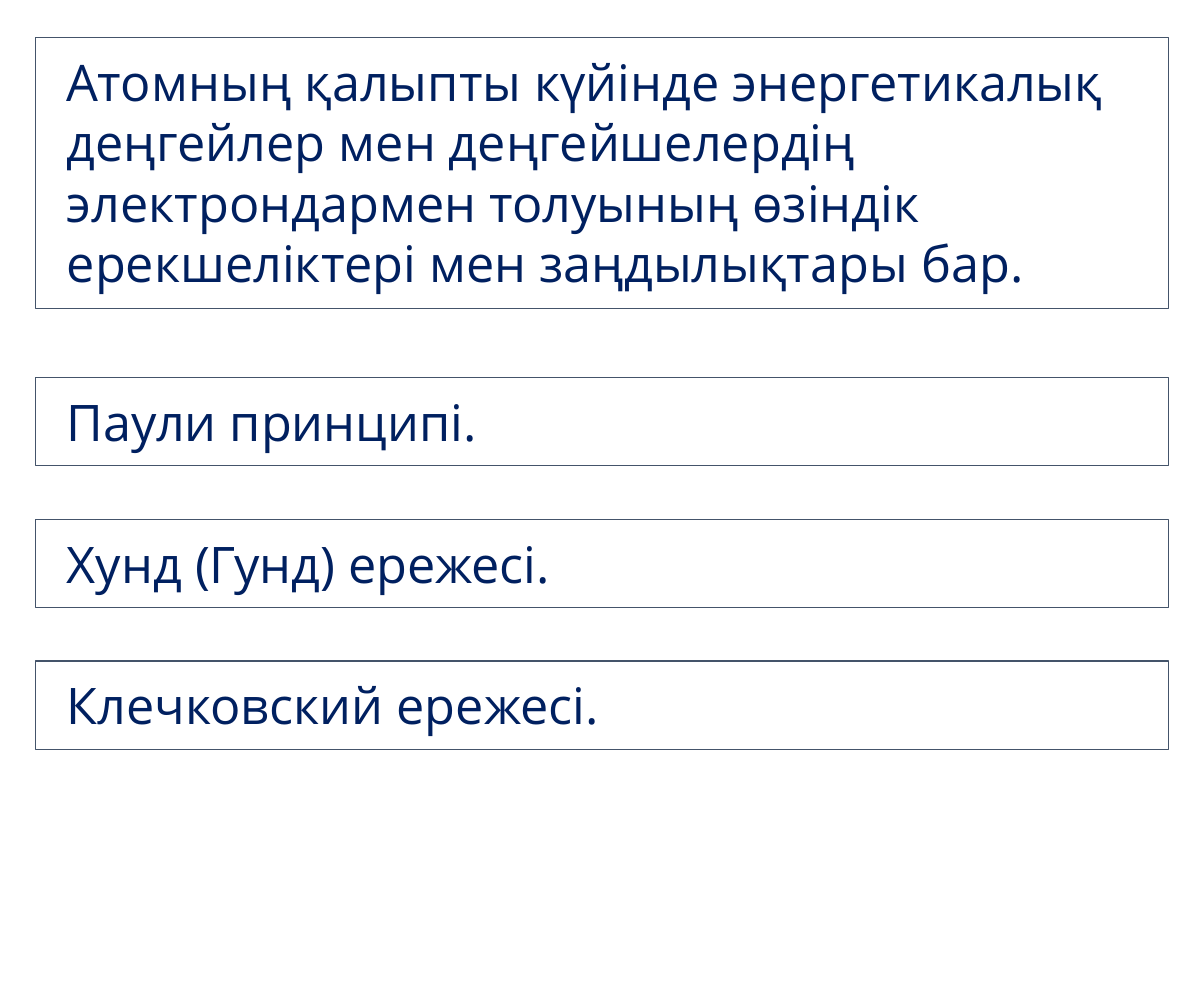
from dataclasses import dataclass

from pptx import Presentation
from pptx.dml.color import RGBColor
from pptx.enum.shapes import MSO_SHAPE
from pptx.enum.text import MSO_ANCHOR, MSO_AUTO_SIZE, PP_ALIGN
from pptx.util import Inches, Pt


@dataclass(frozen=True)
class Theme:
    font: str = "Open Sans"
    size: Pt = Pt(32)
    text: RGBColor = RGBColor(0x00, 0x20, 0x60)
    border: RGBColor = RGBColor(0x44, 0x54, 0x6A)
    border_width: Pt = Pt(0.75)


theme = Theme()

prs = Presentation()
prs.slide_width = Inches(10.62)
prs.slide_height = Inches(8.75)
slide = prs.slides.add_slide(prs.slide_layouts[6])


def add_statement(top, height, wording):
    """Add a full-width outlined box with one left-aligned statement."""
    statement = slide.shapes.add_shape(
        MSO_SHAPE.RECTANGLE, Inches(0.31), Inches(top), Inches(10), Inches(height))
    statement.shadow.inherit = False
    statement.fill.background()
    statement.line.color.rgb = theme.border
    statement.line.width = theme.border_width

    frame = statement.text_frame
    frame.word_wrap = True
    frame.auto_size = MSO_AUTO_SIZE.SHAPE_TO_FIT_TEXT
    frame.vertical_anchor = MSO_ANCHOR.TOP
    frame.margin_left = frame.margin_right = Inches(0.28)
    frame.margin_top = frame.margin_bottom = Inches(0.12)

    paragraph = frame.paragraphs[0]
    paragraph.alignment = PP_ALIGN.LEFT
    run = paragraph.add_run()
    run.text = wording
    run.font.name = theme.font
    run.font.size = theme.size
    run.font.color.rgb = theme.text


# Introduction
add_statement(0.33, 2.39,
              "Атомның қалыпты күйінде энергетикалық деңгейлер мен деңгейшелердің "
              "электрондармен толуының өзіндік ерекшеліктері мен заңдылықтары бар.")

# Rules, evenly spaced below the introduction
rules = ["Паули принципі.", "Хунд (Гунд) ережесі.", "Клечковский ережесі."]
for index, rule in enumerate(rules):
    add_statement(3.33 + 1.25 * index, 0.78, rule)

prs.save("out.pptx")
